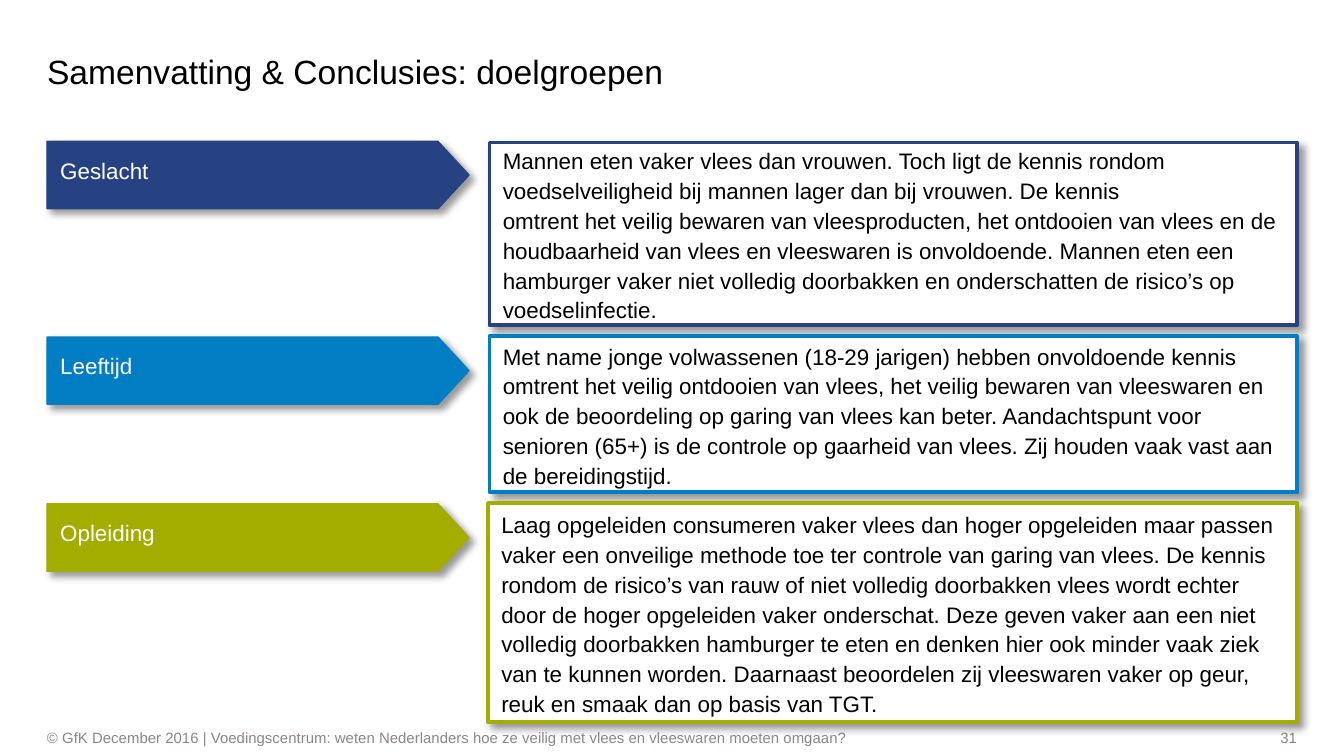
from dataclasses import dataclass

from lxml.etree import SubElement
from pptx import Presentation
from pptx.dml.color import RGBColor
from pptx.enum.shapes import MSO_SHAPE
from pptx.enum.text import MSO_ANCHOR, PP_ALIGN
from pptx.oxml.ns import qn
from pptx.util import Pt


@dataclass(frozen=True)
class Theme:
    font: str = "Arial"
    white: str = "FFFFFF"
    black: str = "000000"
    gray: str = "8E8581"
    navy: str = "264283"
    blue: str = "007DC3"
    green: str = "A2AD00"
    title: int = 18
    body: int = 12
    small: int = 8
    lead: int = 16


LEFT, RIGHT = 25.2, 694.8
TAG_W, TAG_H, TIP = 226.1, 36, 16.6


class Deck:
    def __init__(self, theme):
        self.theme = theme
        self.file = Presentation()
        self.file.slide_width, self.file.slide_height = Pt(720), Pt(405)
        self.slide = self.file.slides.add_slide(self.file.slide_layouts[6])

    def letter(self, shape, text, size, color, pads=(0, 0, 0, 0),
               align=PP_ALIGN.LEFT, lead=None):
        """Put styled text into a shape."""
        frame = shape.text_frame
        frame.text = text
        frame.word_wrap = True
        frame.vertical_anchor = MSO_ANCHOR.MIDDLE
        (frame.margin_left, frame.margin_top,
         frame.margin_right, frame.margin_bottom) = map(Pt, pads)
        for para in frame.paragraphs:
            para.alignment = align
            if lead:
                para.line_spacing = Pt(lead)
            for run in para.runs:
                run.font.name = self.theme.font
                run.font.size = Pt(size)
                run.font.color.rgb = RGBColor.from_string(color)

    def paint(self, shape, fill, line, width):
        """Set fill, outline and a soft shadow to the lower right."""
        shape.fill.solid()
        shape.fill.fore_color.rgb = RGBColor.from_string(fill)
        shape.line.color.rgb = RGBColor.from_string(line)
        shape.line.width = Pt(width)
        shape.shadow.inherit = False
        effects = shape._element.spPr.find(qn("a:effectLst"))
        shade = SubElement(effects, qn("a:outerShdw"), blurRad=str(Pt(4)),
                           dist=str(Pt(3)), dir=str(45 * 60000),
                           algn="tl", rotWithShape="0")
        tint = SubElement(shade, qn("a:srgbClr"), val=self.theme.black)
        SubElement(tint, qn("a:alpha"), val="40000")

    def label(self, text, left, top, width, height, size, color,
              align=PP_ALIGN.LEFT):
        box = self.slide.shapes.add_textbox(
            Pt(left), Pt(top), Pt(width), Pt(height))
        self.letter(box, text, size, color, align=align)

    def tag(self, text, top, color):
        """Draw a bar that points right at its panel."""
        neck, mid, end = LEFT + TAG_W - TIP, top + TAG_H / 2, top + TAG_H
        pen = self.slide.shapes.build_freeform(Pt(LEFT), Pt(top))
        points = [(neck, top), (LEFT + TAG_W, mid), (neck, end), (LEFT, end)]
        pen.add_line_segments([(Pt(x), Pt(y)) for x, y in points])
        shape = pen.convert_to_shape()
        self.paint(shape, color, color, 0.75)
        self.letter(shape, text, self.theme.body, self.theme.white,
                    (7.2, 3.6, 7.2, 8.6))

    def panel(self, text, left, top, height, color):
        shape = self.slide.shapes.add_shape(
            MSO_SHAPE.RECTANGLE,
            Pt(left), Pt(top), Pt(RIGHT - left), Pt(height))
        self.paint(shape, self.theme.white, color, 2)
        self.letter(shape, text, self.theme.body, self.theme.black,
                    (7.2, 3.6, 7.2, 3.6), lead=self.theme.lead)


def main():
    theme = Theme()
    deck = Deck(theme)
    deck.label("31", 592.8, 389.5, 102, 11.5, theme.small, theme.gray,
               PP_ALIGN.RIGHT)
    deck.label("© GfK December 2016 | Voedingscentrum: weten Nederlanders "
               "hoe ze veilig met vlees en vleeswaren moeten omgaan?",
               LEFT, 389.5, 556, 11.5, theme.small, theme.gray)
    deck.label("Samenvatting & Conclusies: doelgroepen",
               LEFT, 15.5, 505, 45.4, theme.title, theme.black)

    # name, color, tag top, panel left, panel top, panel height, text
    groups = [
        ("Geslacht", theme.navy, 75.8, 262.3, 76.3, 98,
         "Mannen eten vaker vlees dan vrouwen. Toch ligt de kennis rondom "
         "voedselveiligheid bij mannen lager dan bij vrouwen. De kennis\n"
         "omtrent het veilig bewaren van vleesproducten, het ontdooien van "
         "vlees en de houdbaarheid van vlees en vleeswaren is onvoldoende. "
         "Mannen eten een hamburger vaker niet volledig doorbakken en "
         "onderschatten de risico’s op voedselinfectie."),
        ("Leeftijd", theme.blue, 180.6, 262.3, 180.2, 83.6,
         "Met name jonge volwassenen (18-29 jarigen) hebben onvoldoende "
         "kennis omtrent het veilig ontdooien van vlees, het veilig bewaren "
         "van vleeswaren en ook de beoordeling op garing van vlees kan "
         "beter. Aandachtspunt voor senioren (65+) is de controle op "
         "gaarheid van vlees. Zij houden vaak vast aan de bereidingstijd."),
        ("Opleiding", theme.green, 270, 261.5, 269.5, 117.5,
         "Laag opgeleiden consumeren vaker vlees dan hoger opgeleiden maar "
         "passen vaker een onveilige methode toe ter controle van garing "
         "van vlees. De kennis rondom de risico’s van rauw of niet volledig "
         "doorbakken vlees wordt echter door de hoger opgeleiden vaker "
         "onderschat. Deze geven vaker aan een niet volledig doorbakken "
         "hamburger te eten en denken hier ook minder vaak ziek van te "
         "kunnen worden. Daarnaast beoordelen zij vleeswaren vaker op geur, "
         "reuk en smaak dan op basis van TGT."),
    ]
    for name, color, tag_top, left, top, height, text in groups:
        deck.panel(text, left, top, height, color)
        deck.tag(name, tag_top, color)
    deck.file.save("out.pptx")


if __name__ == "__main__":
    main()
